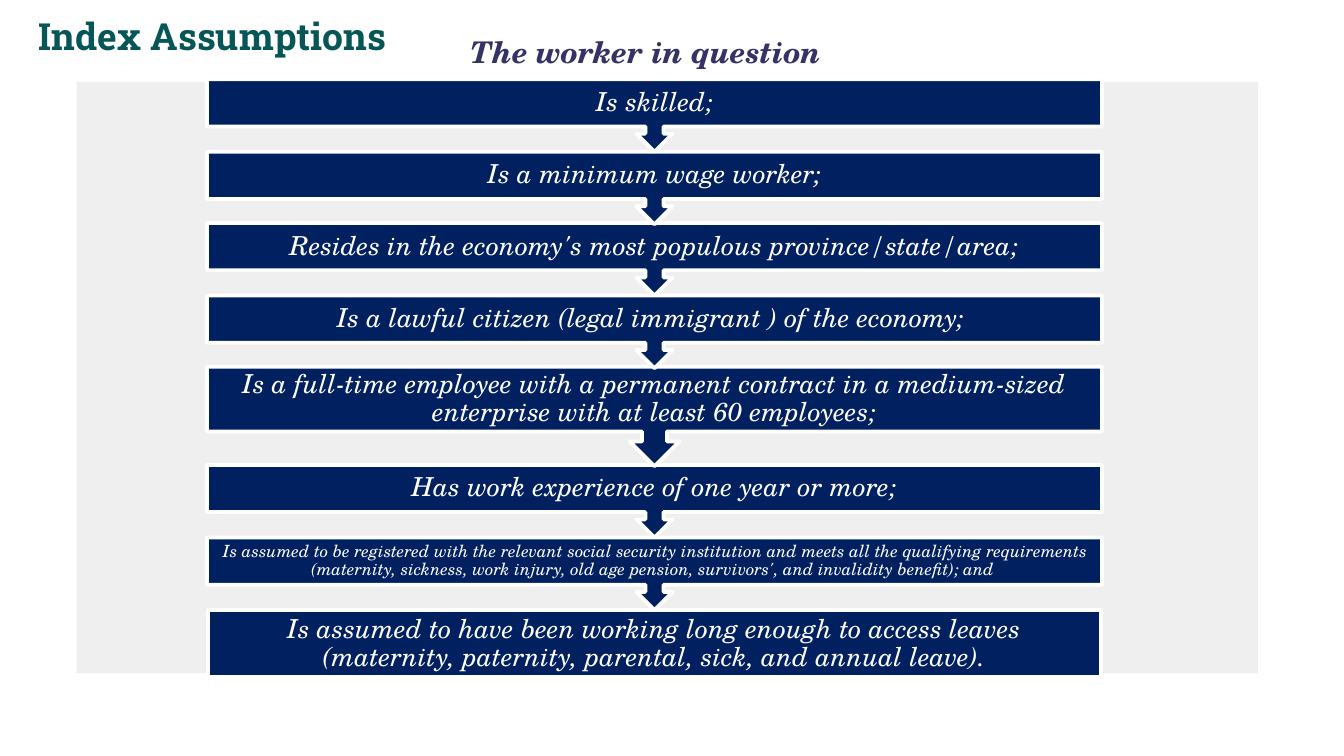
from pptx import Presentation
from pptx.dml.color import RGBColor
from pptx.enum import shapes, text
from pptx.util import Inches, Pt

SERIF = "TeX Gyre Schola"
NAVY, WHITE = "002060", "FFFFFF"


def color(value):
    return RGBColor.from_string(value)


def write(box, content, size, font, fill, align, anchor, margins, bold=False, italic=False):
    frame = box.text_frame
    frame.text = content
    frame.word_wrap = True
    frame.auto_size = text.MSO_AUTO_SIZE.NONE
    frame.vertical_anchor = anchor
    frame.margin_left = frame.margin_right = Inches(margins[0])
    frame.margin_top = frame.margin_bottom = Inches(margins[1])
    para = frame.paragraphs[0]
    para.alignment = align
    para.space_before = Pt(0)
    span = para.runs[0]
    span.font.name = font
    span.font.size = Pt(size)
    span.font.bold = bold
    span.font.italic = italic
    span.font.color.rgb = color(fill)


# Widescreen page, 16:9
deck = Presentation()
deck.slide_width = Inches(10)
deck.slide_height = Inches(10 * 9 / 16)
page = deck.slides.add_slide(deck.slide_layouts[0])

# Title and subtitle
headings = [
    (page.shapes.title, "Index Assumptions", (0.19, 0, 4.68, 0.82), 20, "Roboto Slab", "065657", False),
    (page.placeholders[1], "The worker in question", (3.4, 0.15, 3.23, 0.49), 16, SERIF, "343266", True),
]
for box, content, place, size, font, fill, italic in headings:
    box.left, box.top, box.width, box.height = map(Inches, place)
    write(box, content, size, font, fill, text.PP_ALIGN.LEFT, text.MSO_ANCHOR.TOP,
          (0.1, 0.1), bold=True, italic=italic)

# Grey panel, behind the headings
panel = page.shapes.add_shape(shapes.MSO_SHAPE.RECTANGLE, Inches(0.57), Inches(0.61),
                              Inches(8.79), Inches(4.4))
panel.shadow.inherit = False
panel.fill.solid()
panel.fill.fore_color.rgb = color("EFEFEF")
panel.line.fill.background()
page.shapes.title._element.addprevious(panel._element)

# Chain of assumptions: top, height, text size, wording
steps = [
    (0.59, 0.54, 14, "Is skilled;"),
    (1.13, 0.54, 14, "Is a minimum wage worker;"),
    (1.66, 0.54, 14, "Resides in the economy's most populous province/state/area;"),
    (2.2, 0.54, 14, "Is a lawful citizen (legal immigrant ) of the economy; "),
    (2.73, 0.74, 14, "Is a full-time employee with a permanent contract in a medium-sized "
                     "enterprise with at least 60 employees;"),
    (3.46, 0.54, 14, "Has work experience of one year or more;"),
    (4, 0.54, 9, "Is assumed to be registered with the relevant social security institution "
                 "and meets all the qualifying requirements (maternity, sickness, work injury, "
                 "old age pension, survivors', and invalidity benefit); and "),
    (4.54, 0.5, 14, "Is assumed to have been working long enough to access leaves "
                    "(maternity, paternity, parental, sick, and annual leave)."),
]
# Drawn from the bottom up, so that each arrow tip lies over the next box
for top, height, size, content in reversed(steps):
    is_last = content == steps[-1][-1]
    kind = shapes.MSO_SHAPE.RECTANGLE if is_last else shapes.MSO_SHAPE.DOWN_ARROW_CALLOUT
    left, width = (1.55, 6.64) if is_last else (1.54, 6.66)
    box = page.shapes.add_shape(kind, Inches(left), Inches(top), Inches(width), Inches(height))
    box.shadow.inherit = False
    box.fill.solid()
    box.fill.fore_color.rgb = color(NAVY)
    box.line.color.rgb = color(WHITE)
    box.line.width = Pt(2)
    write(box, content, size, SERIF, WHITE, text.PP_ALIGN.CENTER, text.MSO_ANCHOR.MIDDLE,
          (0.07 if size == 9 else 0.11, 0), italic=True)
    box.text_frame.paragraphs[0].line_spacing = 0.9

deck.save("out.pptx")
